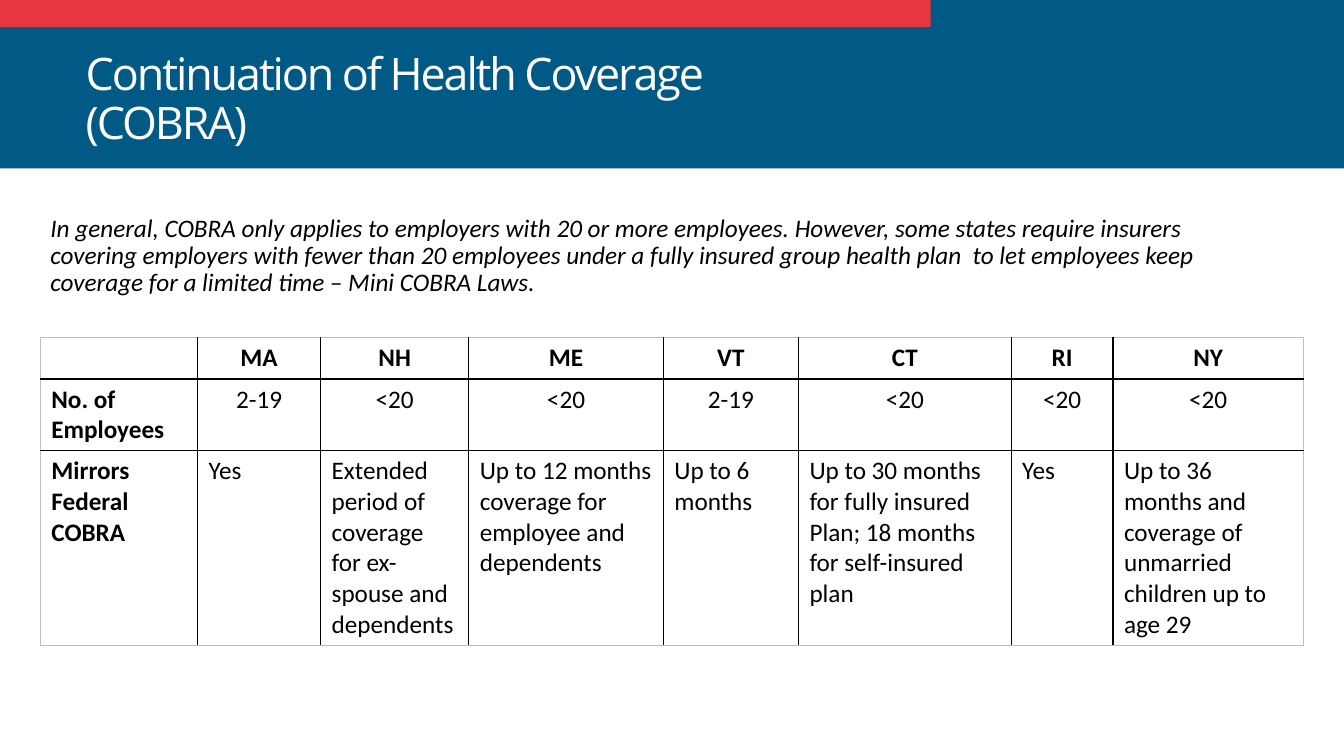
"""Build the slide on continuation of health coverage under COBRA."""
import pptx
import pptx.dml.color
import pptx.enum.text
import pptx.enum.shapes
import pptx.oxml.ns
import pptx.util
from lxml import etree

Inches = pptx.util.Inches
Pt = pptx.util.Pt
qn = pptx.oxml.ns.qn
RGB = pptx.dml.color.RGBColor.from_string
PP_ALIGN = pptx.enum.text.PP_ALIGN
COLORS = {"blue": "005A85", "red": "E63641", "white": "FFFFFF",
          "black": "000000", "edge": "BFBFBF"}


def add_run(paragraph, text, size, font, color, bold=False, italic=False):
    run = paragraph.add_run()
    run.text = text
    run.font.size = Pt(size)
    run.font.name = font
    run.font.color.rgb = RGB(COLORS[color])
    run.font.bold = bold
    run.font.italic = italic
    return run


def set_border(cell, side, color):
    line = etree.SubElement(cell._tc.get_or_add_tcPr(), qn(f"a:{side}"), w=str(Pt(1)))
    fill = etree.SubElement(line, qn("a:solidFill"))
    etree.SubElement(fill, qn("a:srgbClr"), val=COLORS[color])


presentation = pptx.Presentation()
presentation.slide_width = Inches(13.33)
presentation.slide_height = Inches(7.5)
slide = presentation.slides.add_slide(presentation.slide_layouts[1])
title, intro = slide.placeholders

bands = [("blue", 13.33, 1.67), ("red", 9.23, 0.27)]
for position, (color, width, height) in enumerate(bands, start=2):
    band = slide.shapes.add_shape(pptx.enum.shapes.MSO_SHAPE.RECTANGLE,
                                  0, 0, Inches(width), Inches(height))
    band.shadow.inherit = False
    band.fill.solid()
    band.fill.fore_color.rgb = RGB(COLORS[color])
    band.line.fill.background()
    slide.shapes._spTree.insert(position, band._element)

title.left, title.top = Inches(0.75), Inches(0.27)
title.width, title.height = Inches(7.08), Inches(1.45)
title.text_frame.auto_size = pptx.enum.text.MSO_AUTO_SIZE.NONE
title.text_frame.vertical_anchor = pptx.enum.text.MSO_ANCHOR.MIDDLE
heading = title.text_frame.paragraphs[0]
heading.alignment = PP_ALIGN.LEFT
heading.line_spacing = 0.9
heading_run = add_run(heading, "Continuation of Health Coverage (COBRA)",
                      32, "Open Sans", "white")
heading_run.font._element.set("spc", "-150")

intro.left, intro.top = Inches(0.4), Inches(2.09)
intro.width, intro.height = Inches(12), Inches(1.9)
intro.text_frame.auto_size = pptx.enum.text.MSO_AUTO_SIZE.NONE
summary = intro.text_frame.paragraphs[0]
summary_format = summary._p.get_or_add_pPr()
summary_format.set("marL", "0")
summary_format.set("indent", "0")
etree.SubElement(summary_format, qn("a:buNone"))
summary.line_spacing = 0.9
summary.space_before = Pt(0)
add_run(summary,
        "In general, COBRA only applies to employers with 20 or more employees. "
        "However, some states require insurers covering employers with fewer than "
        "20 employees under a fully insured group health plan  to let employees "
        "keep coverage for a limited time – Mini COBRA Laws.",
        18, "Calibri", "black", italic=True)

state_rules = [
    ["", "MA", "NH", "ME", "VT", "CT", "RI", "NY"],
    ["No. of Employees", "2-19", "<20", "<20", "2-19", "<20", "<20", "<20"],
    ["Mirrors Federal COBRA", "Yes",
     "Extended period of coverage for ex-spouse and dependents",
     "Up to 12 months coverage for employee and dependents",
     "Up to 6 months",
     "Up to 30 months for fully insured Plan; 18 months for self-insured plan",
     "Yes",
     "Up to 36 months and coverage of unmarried children up to age 29"],
]
column_widths = [1.56, 1.22, 1.47, 1.93, 1.34, 2.11, 1.01, 1.89]
row_heights = [0.41, 0.71, 1.93]
last_row, last_column = len(row_heights) - 1, len(column_widths) - 1
states = slide.shapes.add_table(
    len(row_heights), len(column_widths), Inches(0.4), Inches(3.35),
    Inches(sum(column_widths)), Inches(sum(row_heights))).table
states.horz_banding = False
for column, width in zip(states.columns, column_widths):
    column.width = Inches(width)
for row, height in zip(states.rows, row_heights):
    row.height = Inches(height)

for r, rules in enumerate(state_rules):
    for c, rule in enumerate(rules):
        cell = states.cell(r, c)
        cell.margin_left = cell.margin_right = Inches(0.11)
        cell.margin_top = cell.margin_bottom = Inches(0.05)
        outer_sides = {"lnL": c == 0, "lnR": c == last_column,
                       "lnT": r == 0, "lnB": r == last_row}
        for side, is_outer in outer_sides.items():
            set_border(cell, side, "edge" if is_outer else "black")
        cell.fill.background()
        paragraph = cell.text_frame.paragraphs[0]
        paragraph.alignment = PP_ALIGN.CENTER if c and r < last_row else PP_ALIGN.LEFT
        if rule:
            add_run(paragraph, rule, 18, "Calibri", "black", bold=r == 0 or c == 0)
        else:
            paragraph.font.size = Pt(18)

presentation.save("out.pptx")
